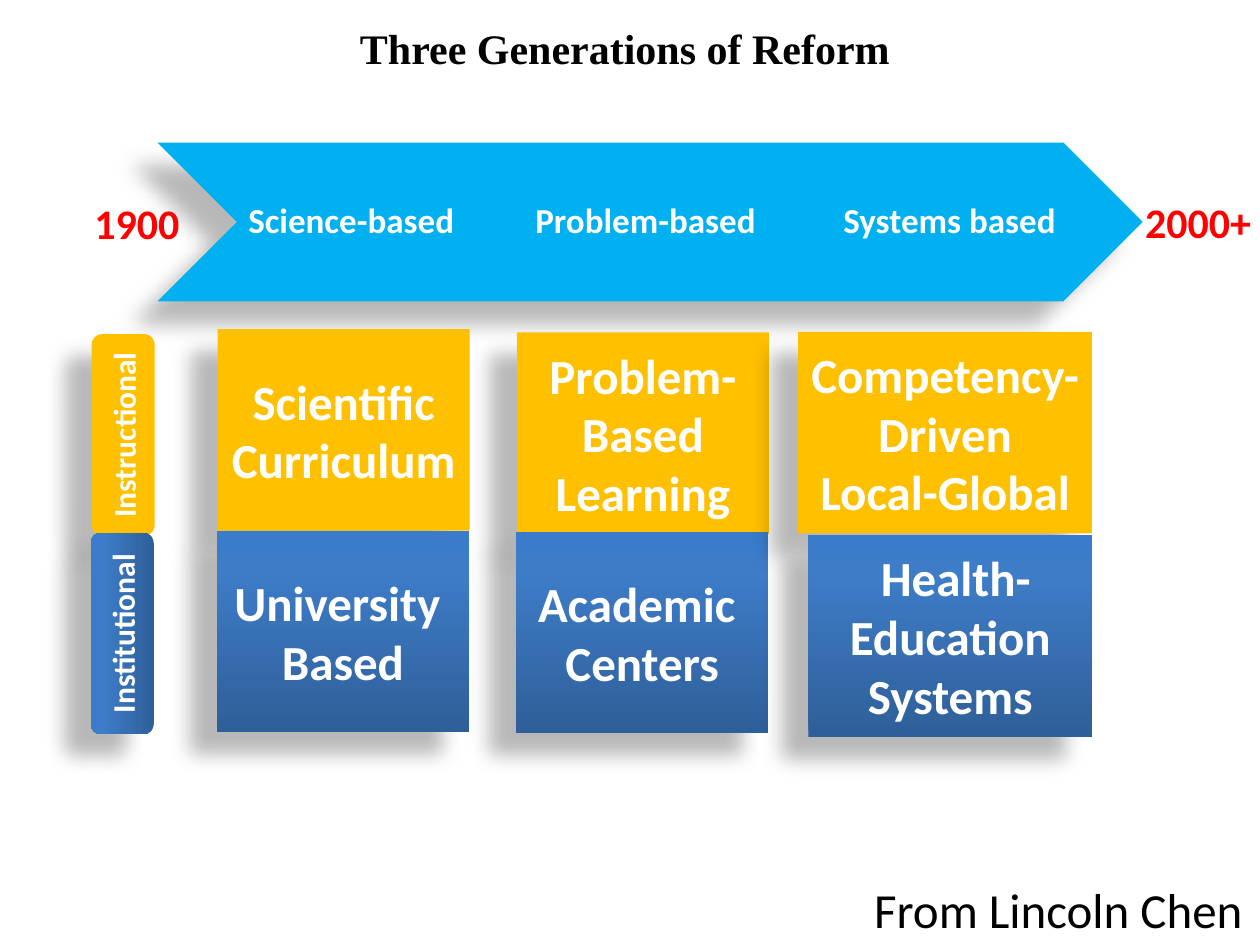
import pptx
import pptx.util
import pptx.dml.color
import pptx.enum.shapes
import pptx.enum.text
import pptx.oxml
from lxml import etree

Pt = pptx.util.Pt
RGBColor = pptx.dml.color.RGBColor
Shape = pptx.enum.shapes.MSO_SHAPE
Align = pptx.enum.text.PP_ALIGN
Anchor = pptx.enum.text.MSO_ANCHOR

BLACK = RGBColor(0x00, 0x00, 0x00)
WHITE = RGBColor(0xFF, 0xFF, 0xFF)
RED = RGBColor(0xFF, 0x00, 0x00)
SKY = RGBColor(0x00, 0xB0, 0xF0)
GOLD = RGBColor(0xFF, 0xC0, 0x00)
BLUE_STOPS = [
    (0, RGBColor(0x2F, 0x5F, 0x99)),
    (80, RGBColor(0x3D, 0x7C, 0xC7)),
    (100, RGBColor(0x3A, 0x7C, 0xCB)),
]
DRAWING_NS = 'xmlns:a="http://schemas.openxmlformats.org/drawingml/2006/main"'

# text, (left, top, width, height), size, bold, font, colour
CAPTIONS = [
    ("Three Generations of Reform", (198.6, 9.4, 320.4, 36), 24, True, "Times New Roman", BLACK),
    ("1900", (46.8, 109.5, 68.4, 36), 24, True, "Calibri", RED),
    ("2000+", (647.2, 108.7, 75.6, 36), 24, True, "Calibri", RED),
    ("From Lincoln Chen", (492.5, 499, 227.5, 41), 28, False, "Calibri", BLACK),
]

ERAS = ["Science-based", "Problem-based", "Systems based"]
ERA_TABS = [164, 340]
ARROW = (90, 81.5, 563, 90.7)
ERA_BOX = (135.4, 81.5, 472.3, 90.7)

BOX_HEIGHT = 115.2
# instructional text, (left, top, width), institutional text, (left, top, width)
GENERATIONS = [
    ("Scientific Curriculum", (124.4, 188.1, 144), "University \nBased", (124, 303.2, 144)),
    ("Problem-Based Learning", (295.4, 190, 144), "Academic \nCenters", (295, 304, 144)),
    ("Competency-Driven\nLocal-Global", (456, 189.6, 168), " Health-Education Systems", (462, 305.9, 162)),
]
# text, left, top before the quarter turn
ROW_LABELS = [("Instructional", 12.8, 230.5), ("Institutional", 12.3, 344)]
LABEL_THICKNESS = 36


def style_text(frame, text, size, bold=True, font="Calibri", color=WHITE, align=Align.CENTER):
    frame.text = text
    for paragraph in frame.paragraphs:
        paragraph.alignment = align
        for run in paragraph.runs:
            run.font.size = Pt(size)
            run.font.bold = bold
            run.font.name = font
            run.font.color.rgb = color


def add_shadow(shape):
    shape.shadow.inherit = False
    effects = shape._element.spPr.find(pptx.oxml.ns.qn("a:effectLst"))
    effects.append(etree.fromstring(
        f'<a:outerShdw {DRAWING_NS} blurRad="{Pt(11.8)}" dist="{Pt(19.7)}" dir="{141 * 60000}" '
        'algn="ctr" rotWithShape="0"><a:srgbClr val="000000"><a:alpha val="28000"/>'
        '</a:srgbClr></a:outerShdw>'))


def fill_blue_gradient(shape):
    """Blue gradient running from dark at the foot to bright at the top."""
    shape.fill.gradient()
    gradient = shape._element.spPr.find(pptx.oxml.ns.qn("a:gradFill"))
    stops = "".join(f'<a:gs pos="{position * 1000}"><a:srgbClr val="{color}"/></a:gs>'
                    for position, color in BLUE_STOPS)
    gradient.getparent().replace(gradient, etree.fromstring(
        f'<a:gradFill {DRAWING_NS} rotWithShape="1"><a:gsLst>{stops}</a:gsLst>'
        '<a:lin ang="16200000" scaled="0"/></a:gradFill>'))


def add_block(shapes, kind, place, fill=None, text="", size=28):
    """Shadowed shape; without a fill colour it takes the blue gradient."""
    block = shapes.add_shape(kind, *map(Pt, place))
    if fill is None:
        fill_blue_gradient(block)
    else:
        block.fill.solid()
        block.fill.fore_color.rgb = fill
    block.line.fill.background()
    add_shadow(block)
    if text:
        block.text_frame.vertical_anchor = Anchor.MIDDLE
        block.text_frame.word_wrap = True
        style_text(block.text_frame, text, size)
    return block


def add_timeline(shapes):
    timeline = shapes.add_group_shape().shapes
    add_block(timeline, Shape.CHEVRON, ARROW, SKY)
    frame = timeline.add_textbox(*map(Pt, ERA_BOX)).text_frame
    frame.word_wrap = True
    frame.vertical_anchor = Anchor.MIDDLE
    frame.margin_left = Pt(6.5)
    frame.margin_right = frame.margin_top = frame.margin_bottom = Pt(2.2)
    style_text(frame, "\t".join(ERAS), 20, align=Align.LEFT)
    eras = frame.paragraphs[0]
    eras.line_spacing = 0.9
    stops = "".join(f'<a:tab pos="{Pt(tab)}" algn="l"/>' for tab in ERA_TABS)
    eras._p.get_or_add_pPr().append(
        etree.fromstring(f'<a:tabLst {DRAWING_NS}>{stops}</a:tabLst>'))


def main():
    deck = pptx.Presentation()
    deck.slide_width, deck.slide_height = Pt(720), Pt(540)
    shapes = deck.slides.add_slide(deck.slide_layouts[6]).shapes

    add_timeline(shapes)
    for instructional, upper, institutional, lower in GENERATIONS:
        add_block(shapes, Shape.RECTANGLE, (*upper, BOX_HEIGHT), GOLD, instructional)
        add_block(shapes, Shape.RECTANGLE, (*lower, BOX_HEIGHT), None, institutional)
    for (label, left, top), fill in zip(ROW_LABELS, (GOLD, None)):
        tab = add_block(shapes, Shape.ROUNDED_RECTANGLE,
                        (left, top, BOX_HEIGHT, LABEL_THICKNESS), fill, label, 18)
        tab.rotation = 270
    for text, place, size, bold, font, color in CAPTIONS:
        frame = shapes.add_textbox(*map(Pt, place)).text_frame
        frame.word_wrap = False
        style_text(frame, text, size, bold, font, color, Align.LEFT)

    deck.save("out.pptx")


if __name__ == "__main__":
    main()
